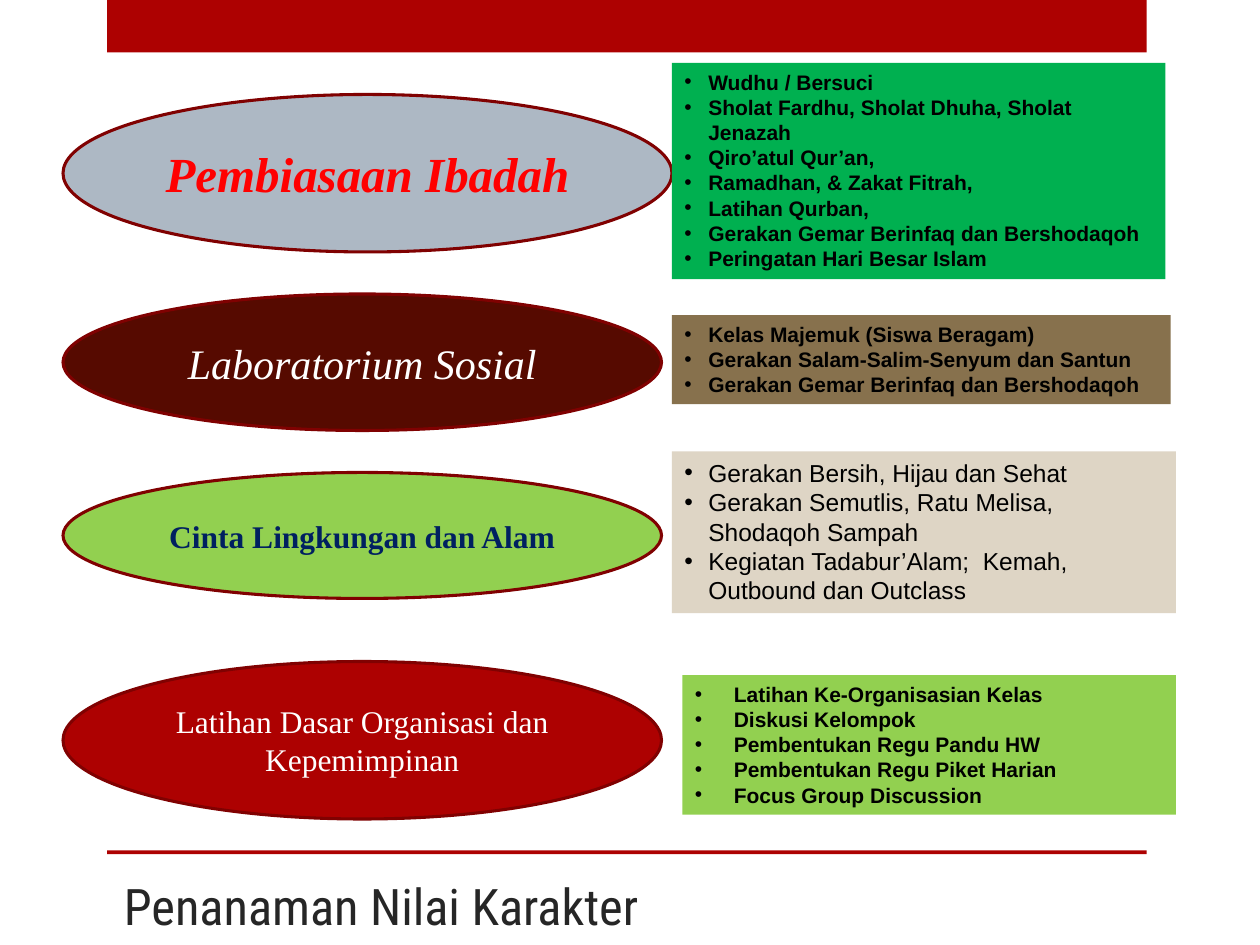
from lxml.etree import SubElement
from pptx import Presentation
from pptx.dml.color import RGBColor
from pptx.enum.shapes import MSO_SHAPE
from pptx.enum.text import MSO_ANCHOR, MSO_AUTO_SIZE, PP_ALIGN
from pptx.oxml.ns import qn
from pptx.util import Inches, Pt

RED, RIM, BLACK, WHITE = "AD0101", "800101", "000000", "FFFFFF"
SERIF, SANS, HEAD = "Times New Roman", "Arial", "Roboto Condensed"
LEFT = 6  # grid column where the ovals start

# top, width, height, fill, text, size, colour, bold, italic
OVALS = [
    (9, 58, 15, "ADB8C4", "Pembiasaan Ibadah", 28, "FF0000", True, True),
    (28, 57, 13, "560A00", "Laboratorium Sosial", 24, WHITE, False, True),
    (45, 57, 12, "92D050", "Cinta Lingkungan dan Alam", 18, "002060", True, False),
    (63, 57, 15, RED, "Latihan Dasar Organisasi dan Kepemimpinan", 18, WHITE, False, False),
]

# left, top, width, height, fill, size, bold, indent in inches, items
LISTS = [
    (64, 6, 47, 20.6, "00B050", 12, True, 0.19, [
        "Wudhu / Bersuci",
        "Sholat Fardhu, Sholat Dhuha, Sholat Jenazah",
        "Qiro’atul Qur’an,",
        "Ramadhan, & Zakat Fitrah,",
        "Latihan Qurban,",
        "Gerakan Gemar Berinfaq dan Bershodaqoh",
        "Peringatan Hari Besar Islam"]),
    (64, 30, 47.5, 8.5, "87714D", 12, True, 0.19, [
        "Kelas Majemuk (Siswa Beragam)",
        "Gerakan Salam-Salim-Senyum dan Santun",
        "Gerakan Gemar Berinfaq dan Bershodaqoh"]),
    (64, 43, 48, 15.4, "DED5C5", 14, False, 0.19, [
        "Gerakan Bersih, Hijau dan Sehat",
        "Gerakan Semutlis, Ratu Melisa, Shodaqoh Sampah",
        "Kegiatan Tadabur’Alam;  Kemah, Outbound dan Outclass"]),
    (65, 64.3, 47, 13.3, "92D050", 12, True, 0.31, [
        "Latihan Ke-Organisasian Kelas",
        "Diskusi Kelompok",
        "Pembentukan Regu Pandu HW",
        "Pembentukan Regu Piket Harian",
        "Focus Group Discussion"]),
]


def grid(*cells):
    """Turn grid counts, twelve to the inch, into lengths."""
    return [Inches(cell / 12) for cell in cells]


def color(code):
    return RGBColor.from_string(code)


def style(para, face, size, code, bold=False, italic=False):
    for run in para.runs:
        font = run.font
        font.name, font.size = face, Pt(size)
        font.bold, font.italic = bold, italic
        font.color.rgb = color(code)


def add_block(slide, kind, box, fill, rim=None):
    shape = slide.shapes.add_shape(kind, *grid(*box))
    shape.shadow.inherit = False
    shape.fill.solid()
    shape.fill.fore_color.rgb = color(fill)
    if rim:
        shape.line.color.rgb = color(rim)
        shape.line.width = Pt(1.75)
    else:
        shape.line.fill.background()
    return shape


def add_title(slide, text):
    title = slide.shapes.title
    title.left, title.top, title.width, title.height = grid(10.6, 82.7, 67.4, 7)
    frame = title.text_frame
    frame.text = text
    frame.auto_size = MSO_AUTO_SIZE.NONE
    frame.vertical_anchor = MSO_ANCHOR.BOTTOM
    para = frame.paragraphs[0]
    para.alignment = PP_ALIGN.LEFT
    style(para, HEAD, 28.8, "262626")


def add_oval(slide, top, width, height, fill, text, size, code, bold, italic):
    oval = add_block(slide, MSO_SHAPE.OVAL, (LEFT, top, width, height), fill, RIM)
    frame = oval.text_frame
    frame.text = text
    frame.vertical_anchor = MSO_ANCHOR.MIDDLE
    para = frame.paragraphs[0]
    para.alignment = PP_ALIGN.CENTER
    style(para, SERIF, size, code, bold, italic)


def add_bullet(para, indent):
    props = para._p.get_or_add_pPr()
    props.set("marL", str(Inches(indent)))
    props.set("indent", str(-Inches(indent)))
    SubElement(props, qn("a:buFont")).set("typeface", SANS)
    SubElement(props, qn("a:buChar")).set("char", "•")


def add_list(slide, left, top, width, height, fill, size, bold, indent, items):
    box = add_block(slide, MSO_SHAPE.RECTANGLE, (left, top, width, height), fill)
    frame = box.text_frame
    frame.text = "\n".join(items)
    frame.word_wrap = True
    frame.auto_size = MSO_AUTO_SIZE.SHAPE_TO_FIT_TEXT
    frame.vertical_anchor = MSO_ANCHOR.TOP
    for para in frame.paragraphs:
        para.alignment = PP_ALIGN.LEFT
        add_bullet(para, indent)
        style(para, SANS, size, BLACK, bold)


def main():
    deck = Presentation()
    deck.slide_width, deck.slide_height = Inches(10), Inches(7.5)
    slide = deck.slides.add_slide(deck.slide_layouts[5])
    for top, height in ((0, 5), (81, 0.36)):
        add_block(slide, MSO_SHAPE.RECTANGLE, (10.2, top, 99, height), RED)
    add_title(slide, "Penanaman Nilai Karakter")
    for oval in OVALS:
        add_oval(slide, *oval)
    for entry in LISTS:
        add_list(slide, *entry)
    deck.save("out.pptx")


if __name__ == "__main__":
    main()
